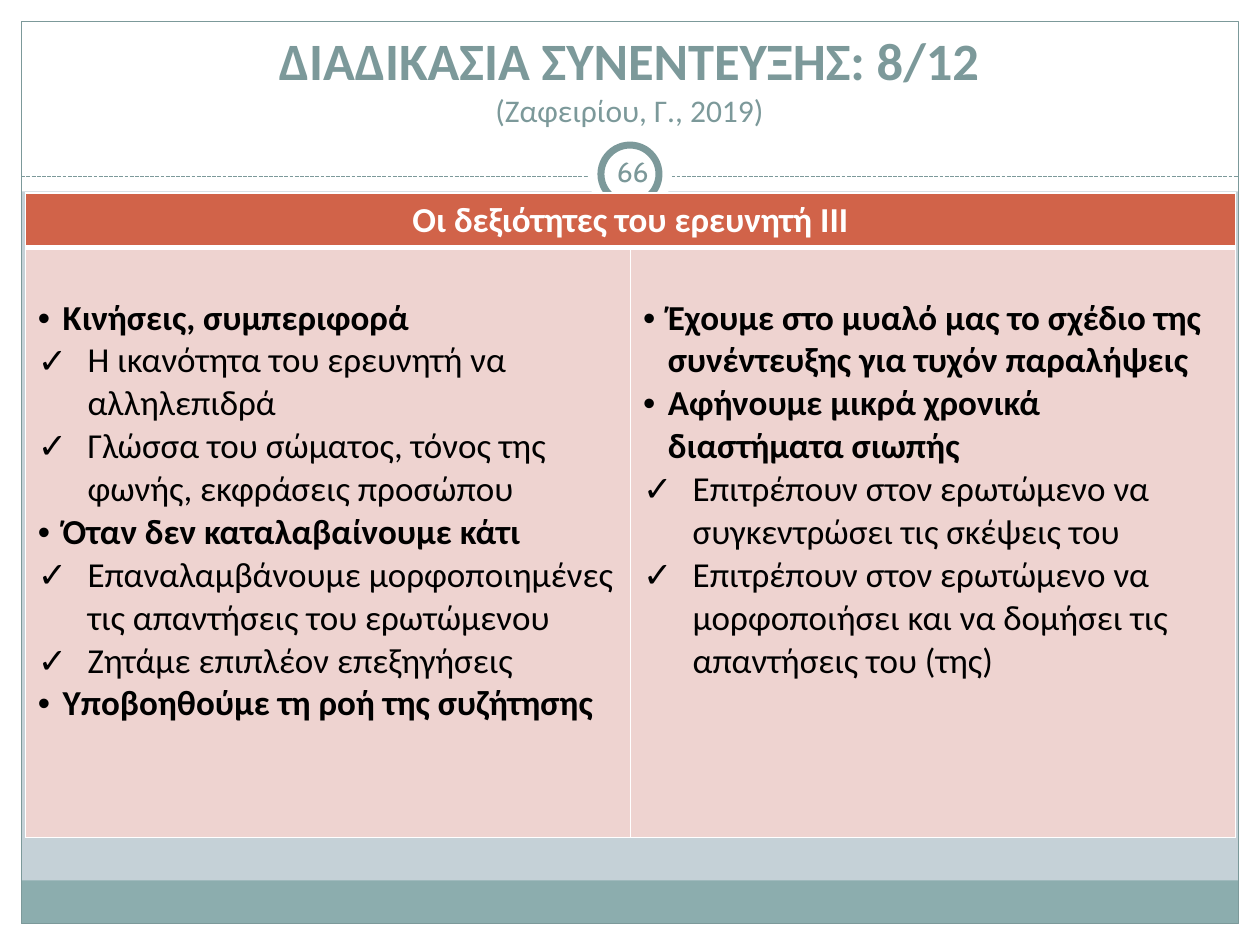
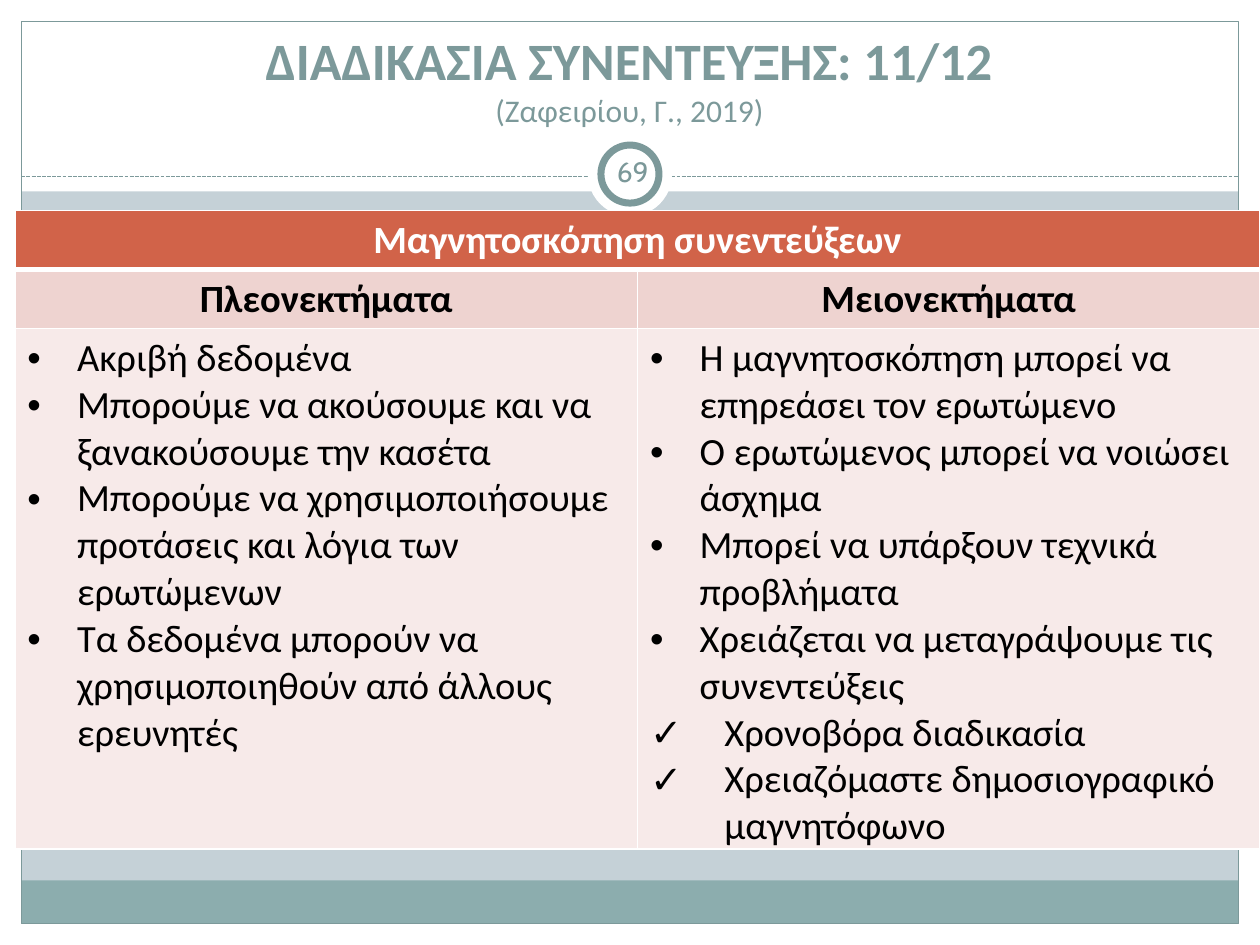
from lxml.etree import SubElement
from pptx import Presentation
from pptx.dml.color import RGBColor
from pptx.enum.dml import MSO_LINE
from pptx.enum.shapes import MSO_CONNECTOR, MSO_SHAPE as Preset
from pptx.enum.text import MSO_ANCHOR as Anchor, PP_ALIGN as Align
from pptx.oxml.ns import qn
from pptx.util import Cm, Pt

WIDTH, HEIGHT, EDGE = 25.4, 19.05, 0.43
MIDDLE, RULE = WIDTH / 2, 3.56
WHITE, BLACK, SLATE, TEAL = "FFFFFF", "000000", "7C999A", "8CADAE"
SKY, RUST, ROSE, BLUSH = "C5D1D7", "D16349", "EED3D0", "F7EAE9"
DOT, TICK = "•", "✓"


def color(value):
    """Turn a hex string into a colour."""
    return RGBColor.from_string(value)


def assign(target, values):
    """Set every attribute named in a dict of format values."""
    for name, value in values.items():
        setattr(target, name, value)


class Deck:
    """Hold the shared style and the page being drawn."""

    def __init__(self):
        """Start an empty deck of the right size."""
        self.deck = Presentation()
        assign(self.deck, {"slide_width": Cm(WIDTH), "slide_height": Cm(HEIGHT)})
        self.page = None

    def shape(self, preset, left, top, width, height, fill=None, line=None, weight=0.75):
        """Draw a preset shape with an optional fill and outline."""
        shape = self.page.shapes.add_shape(preset, Cm(left), Cm(top), Cm(width), Cm(height))
        shape.shadow.inherit = False
        for part, value in ((shape.fill, fill), (shape.line.fill, line)):
            if value:
                part.solid()
                part.fore_color.rgb = color(value)
            else:
                part.background()
        if line:
            shape.line.width = Pt(weight)

    def circle(self, size, center, **style):
        """Draw a circle on the middle axis of the page."""
        self.shape(Preset.OVAL, MIDDLE - size / 2, center - size / 2, size, size, **style)

    def rule(self, left, right, top):
        """Draw a dashed horizontal line."""
        rule = self.page.shapes.add_connector(
            MSO_CONNECTOR.STRAIGHT, Cm(left), Cm(top), Cm(right), Cm(top))
        assign(rule.line, {"width": Pt(0.75), "dash_style": MSO_LINE.SQUARE_DOT})
        rule.line.color.rgb = color(SLATE)
        SubElement(rule._element.spPr, qn("a:effectLst"))

    def span(self, para, text, size, value, bold=False, name="Calibri"):
        """Add a formatted run to a paragraph."""
        span = para.add_run()
        span.text = text
        assign(span.font, {"size": Pt(size), "bold": bold, "name": name})
        span.font.color.rgb = color(value)

    def text(self, left, top, width, height, anchor, **frame):
        """Add a wrapping text box and return its centred paragraph."""
        box = self.page.shapes.add_textbox(Cm(left), Cm(top), Cm(width), Cm(height))
        assign(box.text_frame, {"word_wrap": True, "vertical_anchor": anchor, **frame})
        para = box.text_frame.paragraphs[0]
        para.alignment = Align.CENTER
        return para

    def start(self, title, number):
        """Begin a page with its bands, frame, number and title."""
        self.page = self.deck.slides.add_slide(self.deck.slide_layouts[6])
        self.page.background.fill.solid()
        self.page.background.fill.fore_color.rgb = color(SKY)
        inner = WIDTH - 2 * EDGE
        for area in ((0, HEIGHT - EDGE, WIDTH, EDGE), (0, 0, WIDTH, 3.86),
                     (0, 0, EDGE, HEIGHT), (WIDTH - EDGE, 0, EDGE, HEIGHT)):
            self.shape(Preset.RECTANGLE, *area, fill=WHITE)
        self.shape(Preset.RECTANGLE, EDGE, 17.75, inner, 0.87, fill=TEAL)
        self.shape(Preset.RECTANGLE, EDGE, EDGE, inner, HEIGHT - 2 * EDGE, line=SLATE)
        self.rule(EDGE, WIDTH - EDGE, RULE)
        self.circle(1.7, 3.51, fill=WHITE)
        self.circle(1.17, 3.51, fill=WHITE, line=SLATE, weight=4)
        sides = ("margin_left", "margin_right", "margin_top", "margin_bottom")
        para = self.text(12.12, 2.84, 1.27, 1.22, Anchor.MIDDLE, **dict.fromkeys(sides, Cm(0.13)))
        self.span(para, number, 16, "7B9899", name="Cabin")
        para = self.text(0.84, 0.64, 23.7, 2.08, Anchor.BOTTOM)
        self.span(para, title, 30, SLATE, bold=True)
        para.add_line_break()
        self.span(para, "(Ζαφειρίου, Γ., 2019)", 18, SLATE)

    def table(self, left, top, column, heights, fills):
        """Add a two-column table with a merged heading row."""
        table = self.page.shapes.add_table(
            len(heights), 2, Cm(left), Cm(top), Cm(2 * column), Cm(sum(heights))).table
        table.horz_banding = False
        for item in table.columns:
            item.width = Cm(column)
        for index, (height, fill) in enumerate(zip(heights, fills)):
            table.rows[index].height = Cm(height)
            for cell in table.rows[index].cells:
                self.borders(cell, {"T": 3 if index == 1 else 1, "B": 1 if index else 3})
                cell.fill.solid()
                cell.fill.fore_color.rgb = color(fill)
        table.cell(0, 0).merge(table.cell(0, 1))
        return table

    def borders(self, cell, weights):
        """Give a cell white borders."""
        for side in "LRTB":
            line = SubElement(cell._tc.get_or_add_tcPr(), qn(f"a:ln{side}"),
                              w=str(Pt(weights.get(side, 1))))
            SubElement(SubElement(line, qn("a:solidFill")), qn("a:srgbClr"), val=WHITE)

    def heading(self, cell, text, size, value=BLACK):
        """Write a bold centred heading in a cell."""
        para = cell.text_frame.paragraphs[0]
        para.alignment = Align.CENTER
        self.span(para, text, size, value, bold=True)

    def bullets(self, cell, items, size, indents, bold=(), top=0.13):
        """Write marked items in a cell, indented by their marker."""
        cell.margin_top = Cm(top)
        frame = cell.text_frame
        for index, (mark, text) in enumerate(items):
            para = frame.add_paragraph() if index else frame.paragraphs[0]
            indent = Cm(indents[mark])
            props = para._p.get_or_add_pPr()
            props.set("marL", str(indent))
            props.set("indent", str(-indent))
            SubElement(props, qn("a:buFont"), typeface="Arial")
            SubElement(props, qn("a:buChar"), char=mark)
            self.span(para, text, size, BLACK, bold=mark in bold)


SKILLS = (
    ((DOT, "Κινήσεις, συμπεριφορά"),
     (TICK, "Η ικανότητα του ερευνητή να αλληλεπιδρά"),
     (TICK, "Γλώσσα του σώματος, τόνος της φωνής, εκφράσεις προσώπου"),
     (DOT, "Όταν δεν καταλαβαίνουμε κάτι"),
     (TICK, "Επαναλαμβάνουμε μορφοποιημένες τις απαντήσεις του ερωτώμενου"),
     (TICK, "Ζητάμε επιπλέον επεξηγήσεις"),
     (DOT, "Υποβοηθούμε τη ροή της συζήτησης")),
    ((DOT, "Έχουμε στο μυαλό μας το σχέδιο της συνέντευξης για τυχόν παραλήψεις"),
     (DOT, "Αφήνουμε μικρά χρονικά διαστήματα σιωπής"),
     (TICK, "Επιτρέπουν στον ερωτώμενο να συγκεντρώσει τις σκέψεις του"),
     (TICK, "Επιτρέπουν στον ερωτώμενο να μορφοποιήσει και να δομήσει τις απαντήσεις του (της)")),
)
RECORDING = {
    "Πλεονεκτήματα": (
        (DOT, "Ακριβή δεδομένα"),
        (DOT, "Μπορούμε να ακούσουμε και να ξανακούσουμε την κασέτα"),
        (DOT, "Μπορούμε να χρησιμοποιήσουμε προτάσεις και λόγια των ερωτώμενων"),
        (DOT, "Τα δεδομένα μπορούν να χρησιμοποιηθούν από άλλους ερευνητές")),
    "Μειονεκτήματα": (
        (DOT, "Η μαγνητοσκόπηση μπορεί να επηρεάσει τον ερωτώμενο"),
        (DOT, "Ο ερωτώμενος μπορεί να νοιώσει άσχημα"),
        (DOT, "Μπορεί να υπάρξουν τεχνικά προβλήματα"),
        (DOT, "Χρειάζεται να μεταγράψουμε τις συνεντεύξεις"),
        (TICK, "Χρονοβόρα διαδικασία"),
        (TICK, "Χρειαζόμαστε δημοσιογραφικό μαγνητόφωνο")),
}


def main():
    """Build both pages and save the deck."""
    deck = Deck()

    deck.start("ΔΙΑΔΙΚΑΣΙΑ ΣΥΝΕΝΤΕΥΞΗΣ: 8/12", "66")
    table = deck.table(0.51, 3.89, 12.2, (1.09, 11.89), (RUST, ROSE))
    deck.heading(table.cell(0, 0), "Οι δεξιότητες του ερευνητή ΙΙΙ", 20, WHITE)
    for column, items in enumerate(SKILLS):
        deck.bullets(table.cell(1, column), items, 20, {DOT: 0.5, TICK: 1}, bold=DOT, top=0.99)

    deck.start("ΔΙΑΔΙΚΑΣΙΑ ΣΥΝΕΝΤΕΥΞΗΣ: 11/12", "69")
    table = deck.table(0.3, 4.24, 12.55, (1.19, 1.19, 10.49), (RUST, ROSE, BLUSH))
    deck.heading(table.cell(0, 0), "Μαγνητοσκόπηση συνεντεύξεων", 22, WHITE)
    for column, (name, items) in enumerate(RECORDING.items()):
        deck.heading(table.cell(1, column), name, 22)
        deck.bullets(table.cell(2, column), items, 22, {DOT: 1, TICK: 1.5})

    deck.deck.save("out.pptx")


if __name__ == "__main__":
    main()
